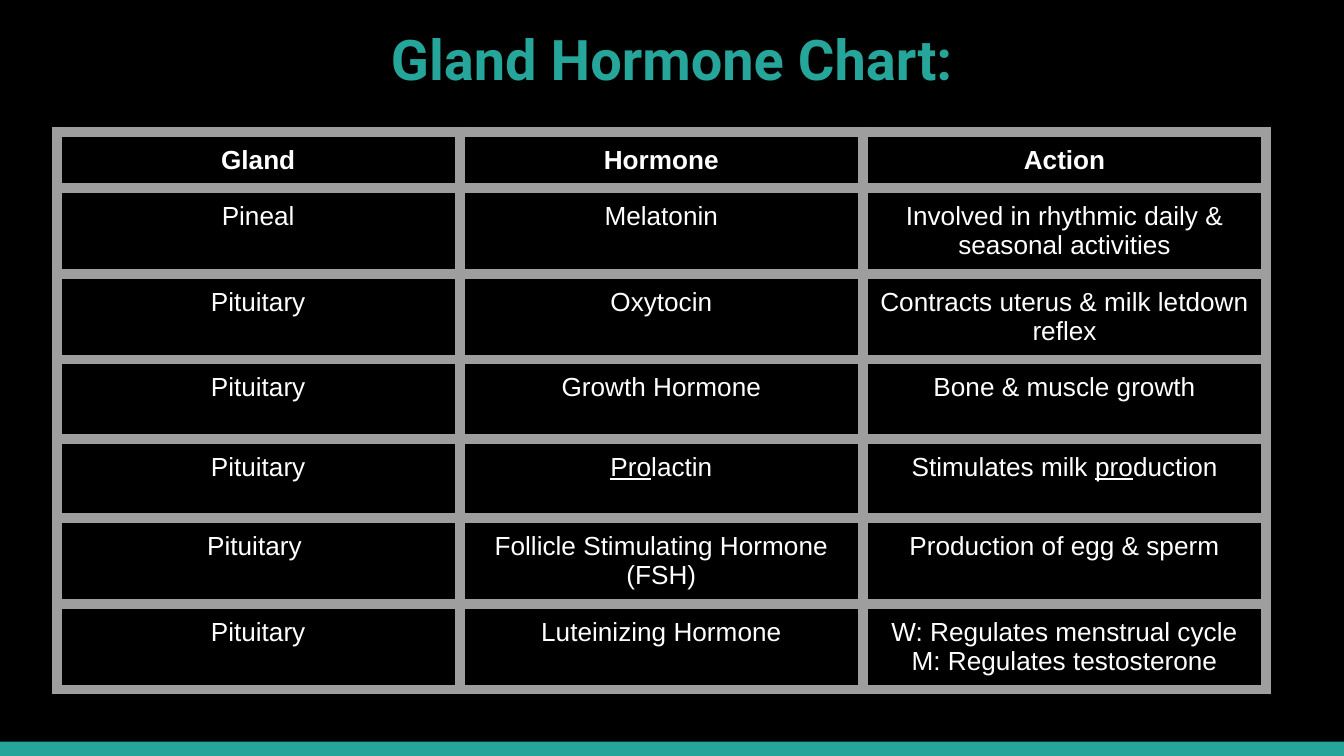
from dataclasses import dataclass

from lxml.etree import SubElement
from pptx import Presentation
from pptx.dml.color import RGBColor
from pptx.enum.shapes import MSO_SHAPE
from pptx.enum.text import MSO_ANCHOR, MSO_AUTO_SIZE, PP_ALIGN
from pptx.oxml.ns import qn
from pptx.util import Pt


@dataclass(frozen=True)
class Theme:
    background: str = "000000"
    accent: str = "26A69A"
    text: str = "FFFFFF"
    grid: str = "9E9E9E"
    title_font: str = "Roboto"
    body_font: str = "Arial"
    title_size: int = 30
    body_size: int = 14
    border: int = 6
    inset: float = 7.2


THEME = Theme()
WIDTH, HEIGHT = 720, 405
COLUMN_WIDTH = 216
ROW_HEIGHTS = [30.24, 45.8, 45.8] + [42.5] * 4
HEADERS = ["Gland", "Hormone", "Action"]
PRO = "Pro"
ROWS = [
    ["Pineal", "Melatonin", "Involved in rhythmic daily & seasonal activities"],
    ["Pituitary", "Oxytocin", "Contracts uterus & milk letdown reflex"],
    ["Pituitary", "Growth Hormone", "Bone & muscle growth"],
    ["Pituitary", "_Pro_lactin", "Stimulates milk _pro_duction"],
    ["Pituitary ", "Follicle Stimulating Hormone (FSH)", "Production of egg & sperm"],
    ["Pituitary", "Luteinizing Hormone",
     "W: Regulates menstrual cycle\nM: Regulates testosterone"],
]


def color(value):
    return RGBColor.from_string(value)


def add_run(p, text, font, size, rgb, bold=False, underline=False):
    r = p.add_run()
    r.text = text
    r.font.name = font
    r.font.size = Pt(size)
    r.font.color.rgb = color(rgb)
    r.font.bold = bold
    r.font.underline = underline


def set_insets(box):
    box.margin_left = box.margin_right = Pt(THEME.inset)
    box.margin_top = box.margin_bottom = Pt(THEME.inset)
    box.vertical_anchor = MSO_ANCHOR.TOP


def add_bar(s):
    bar = s.shapes.add_shape(MSO_SHAPE.RECTANGLE, 0, Pt(397.25), Pt(WIDTH), Pt(7.75))
    bar.shadow.inherit = False
    bar.fill.solid()
    bar.fill.fore_color.rgb = color(THEME.accent)
    bar.line.fill.background()


def set_title(s, text):
    sp = s.shapes.title
    sp.left, sp.top, sp.width, sp.height = Pt(5), Pt(5.8), Pt(710), Pt(80.6)
    tf = sp.text_frame
    tf.word_wrap = True
    tf.auto_size = MSO_AUTO_SIZE.NONE
    set_insets(tf)
    p = tf.paragraphs[0]
    p.alignment = PP_ALIGN.CENTER
    add_run(p, text, THEME.title_font, THEME.title_size, THEME.accent, bold=True)


def set_borders(cell):
    props = cell._tc.get_or_add_tcPr()
    for index, side in enumerate(("lnL", "lnR", "lnT", "lnB")):
        line = props.makeelement(qn(f"a:{side}"), {"w": str(Pt(THEME.border))})
        props.insert(index, line)
        fill = SubElement(line, qn("a:solidFill"))
        SubElement(fill, qn("a:srgbClr"), val=THEME.grid)


def fill_cell(cell, text, bold):
    set_insets(cell)
    cell.fill.solid()
    cell.fill.fore_color.rgb = color(THEME.background)
    set_borders(cell)
    tf = cell.text_frame
    for i, line in enumerate(text.split("\n")):
        p = tf.add_paragraph() if i else tf.paragraphs[0]
        p.alignment = PP_ALIGN.CENTER
        for j, part in enumerate(line.split("_")):
            if part:
                add_run(p, part, THEME.body_font, THEME.body_size, THEME.text,
                        bold, underline=j % 2 == 1)


def add_hormone_table(s):
    rows = [HEADERS] + ROWS
    frame = s.shapes.add_table(len(rows), len(HEADERS), Pt(30.3), Pt(70.6),
                               Pt(COLUMN_WIDTH * len(HEADERS)), Pt(sum(ROW_HEIGHTS)))
    table = frame.table
    for column in table.columns:
        column.width = Pt(COLUMN_WIDTH)
    for i, (texts, height) in enumerate(zip(rows, ROW_HEIGHTS)):
        table.rows[i].height = Pt(height)
        for j, text in enumerate(texts):
            fill_cell(table.cell(i, j), text, bold=i == 0)


def main():
    prs = Presentation()
    prs.slide_width, prs.slide_height = Pt(WIDTH), Pt(HEIGHT)
    s = prs.slides.add_slide(prs.slide_layouts[5])
    s.background.fill.solid()
    s.background.fill.fore_color.rgb = color(THEME.background)
    add_bar(s)
    set_title(s, "Gland Hormone Chart:")
    add_hormone_table(s)
    prs.save("out.pptx")


if __name__ == "__main__":
    main()
